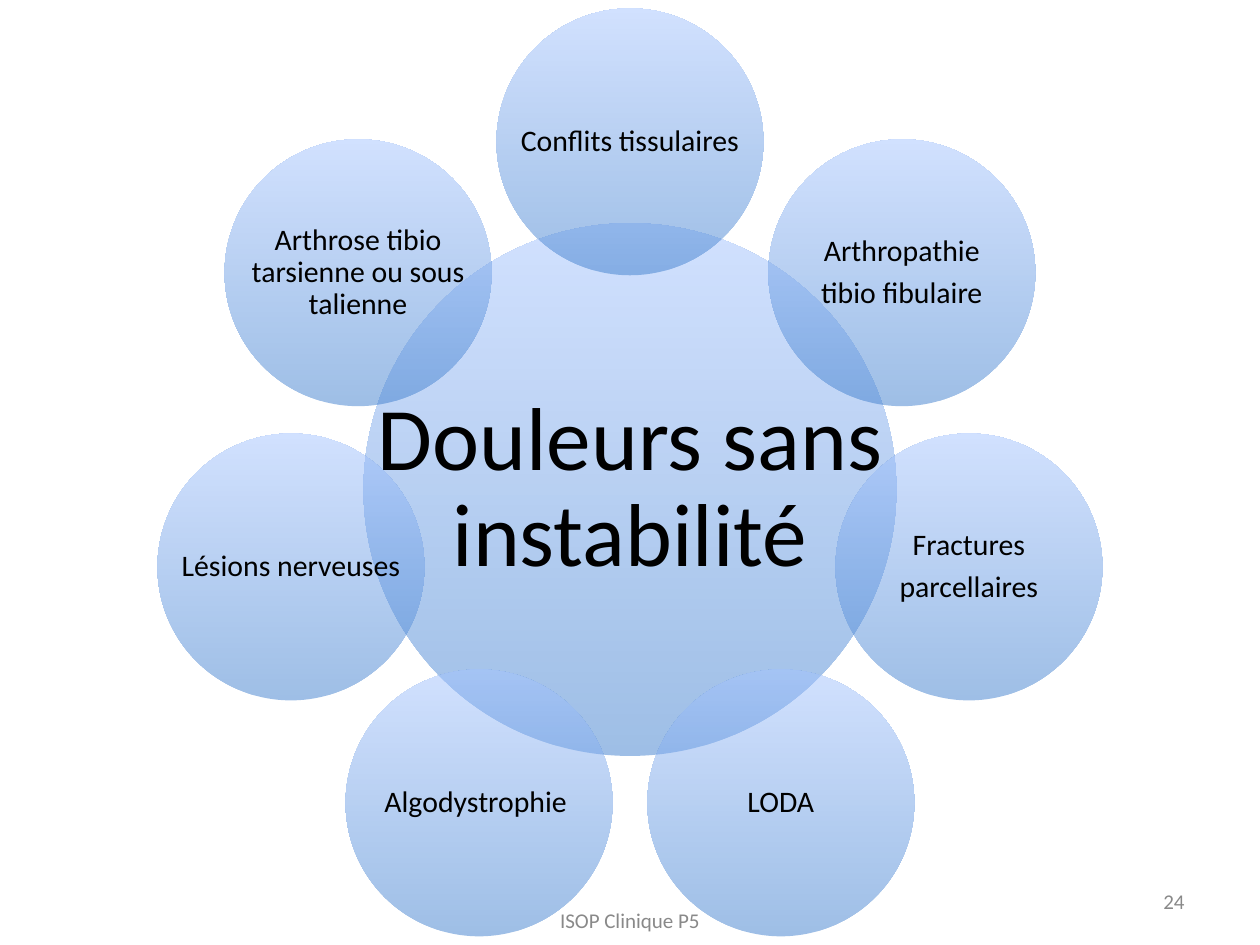
from math import cos, pi, sin

from lxml import etree
from pptx import Presentation
from pptx.dml.color import RGBColor
from pptx.enum.shapes import MSO_SHAPE
from pptx.enum.text import MSO_ANCHOR, MSO_AUTO_SIZE, PP_ALIGN
from pptx.oxml.ns import qn
from pptx.util import Cm, Pt

OVAL = MSO_SHAPE.OVAL
MIDDLE = MSO_ANCHOR.MIDDLE
NO_FIT = MSO_AUTO_SIZE.NONE
CENTER, RIGHT = PP_ALIGN.CENTER, PP_ALIGN.RIGHT

COLORS = {"bottom": "3F7FCE", "top": "A4C4FF", "text": "000000", "footer": "898989"}
CENTER_X, CENTER_Y = 12.7, 9.87
HUB_SIZE, PETAL_SIZE, RING_RADIUS = 10.74, 5.38, 7.01
PETALS = [
    ["Conflits tissulaires"],
    ["Arthropathie", "tibio fibulaire"],
    ["Fractures", "parcellaires"],
    ["LODA"],
    ["Algodystrophie "],
    ["Lésions nerveuses"],
    ["Arthrose tibio tarsienne ou sous talienne"],
]


def add_circle(x, y, size):
    circle = page.shapes.add_shape(OVAL, Cm(x), Cm(y), Cm(size), Cm(size))
    circle.shadow.inherit = False
    circle.line.fill.background()
    circle.fill.gradient()
    circle.fill.gradient_angle = 90
    for stop, name in zip(circle.fill.gradient_stops, ("bottom", "top")):
        stop.color.rgb = RGBColor.from_string(COLORS[name])
    for color in circle.element.iter(qn("a:srgbClr")):
        etree.SubElement(color, qn("a:alpha"), val="50000")


def write_text(box, lines, size, color, align=CENTER, inset=0.25, spacing=None, after=0):
    frame = box.text_frame
    frame.word_wrap = True
    frame.auto_size = NO_FIT
    frame.vertical_anchor = MIDDLE
    frame.margin_left = frame.margin_right = Cm(inset)
    frame.margin_top = frame.margin_bottom = Cm(min(inset, 0.18))
    frame.text = "\n".join(lines)
    for para in frame.paragraphs:
        para.alignment = align
        para.line_spacing = spacing
        para.space_after = Pt(after)
        para.font.name = "Calibri"
        para.font.size = Pt(size)
        para.font.color.rgb = RGBColor.from_string(COLORS[color])


deck = Presentation()
deck.slide_width, deck.slide_height = Cm(25.4), Cm(19.05)
page = deck.slides.add_slide(deck.slide_layouts[5])

hub_x, hub_y = CENTER_X - HUB_SIZE / 2, CENTER_Y - HUB_SIZE / 2
add_circle(hub_x, hub_y, HUB_SIZE)
title = page.shapes.title
title.left, title.top = Cm(hub_x), Cm(hub_y)
title.width = title.height = Cm(HUB_SIZE)
write_text(title, ["Douleurs sans instabilité"], 51, "text", inset=0.18, spacing=0.9)
title.element.getparent().append(title.element)

for index, lines in enumerate(PETALS):
    angle = 2 * pi * index / len(PETALS)
    x = CENTER_X + RING_RADIUS * sin(angle) - PETAL_SIZE / 2
    y = CENTER_Y - RING_RADIUS * cos(angle) - PETAL_SIZE / 2
    add_circle(x, y, PETAL_SIZE)
    label = page.shapes.add_textbox(Cm(x), Cm(y), Cm(PETAL_SIZE), Cm(PETAL_SIZE))
    write_text(label, lines, 17, "text", inset=0.05, spacing=0.9, after=6)

number = page.shapes.add_textbox(Cm(18.2), Cm(17.66), Cm(5.93), Cm(1.01))
write_text(number, ["24"], 12, "footer", align=RIGHT)
footer = page.shapes.add_textbox(Cm(8.68), Cm(18.04), Cm(8.04), Cm(1.01))
write_text(footer, ["ISOP Clinique P5"], 12, "footer")

deck.save("out.pptx")
